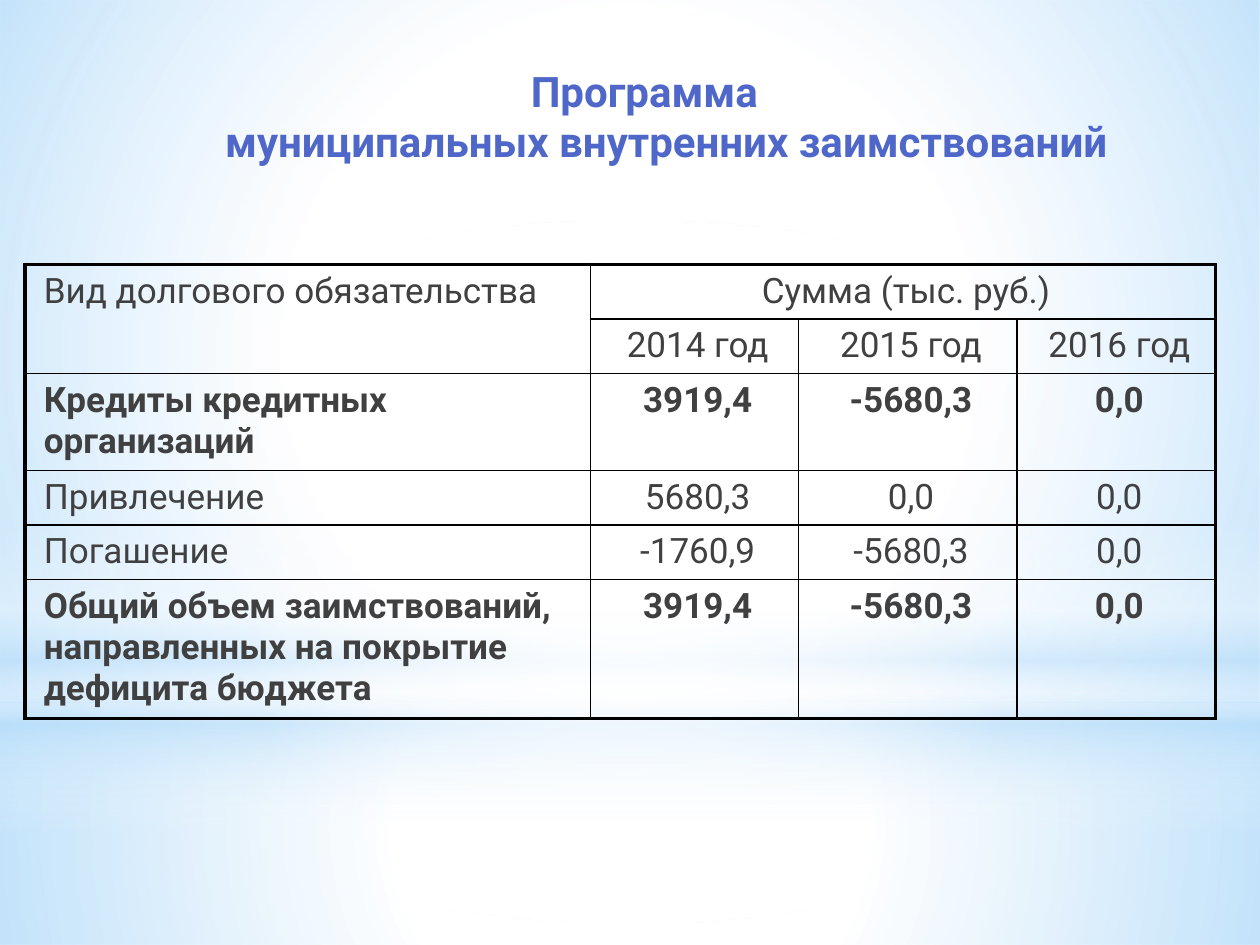
from dataclasses import dataclass

from pptx import Presentation
from pptx import oxml
from pptx import util as u
from pptx.dml.color import RGBColor
from pptx.enum import shapes, text
from pptx.oxml import ns


@dataclass(frozen=True)
class Theme:
    font: str = "Roboto"
    title_color: str = "4E67C8"
    text_color: str = "404040"
    border_color: str = "000000"
    white: str = "FFFFFF"
    sky: str = "B4DCFA"
    title_size: float = 24
    table_size: float = 20
    thin: float = 1
    thick: float = 2.25


RADIAL = ('<a:path path="circle"><a:fillToRect l="50000" t="50000" '
          'r="50000" b="50000"/></a:path>')
VERTICAL = '<a:lin ang="5400000" scaled="0"/>'


class SlideBuilder:
    def __init__(self, slide, theme):
        self.slide = slide
        self.theme = theme

    def gradient(self, kind, top, height, stops, direction):
        shape = self.slide.shapes.add_shape(
            kind, 0, u.Cm(top), u.Cm(25.4), u.Cm(height))
        shape.shadow.inherit = False
        shape.line.fill.background()
        shape.fill.background()
        marks = "".join(
            f'<a:gs pos="{place * 1000}"><a:srgbClr val="{color}">'
            f'<a:alpha val="{alpha * 1000}"/></a:srgbClr></a:gs>'
            for place, color, alpha in stops)
        fill = oxml.parse_xml(
            f'<a:gradFill {ns.nsdecls("a")} rotWithShape="1">'
            f'<a:gsLst>{marks}</a:gsLst>{direction}</a:gradFill>')
        properties = shape.element.spPr
        properties.replace(properties.find(ns.qn("a:noFill")), fill)

    def fill_para(self, para, words, size, color, indent, **formats):
        para.text = words
        for name, value in indent.items():
            para._p.get_or_add_pPr().set(name, str(u.Cm(value)))
        values = dict(name=self.theme.font, size=u.Pt(size), **formats)
        for span in para.runs:
            for name, value in values.items():
                setattr(span.font, name, value)
            span.font.color.rgb = RGBColor.from_string(color)

    def title(self, words, left, top, width, height):
        box = self.slide.shapes.add_textbox(
            *(u.Cm(length) for length in (left, top, width, height)))
        frame = box.text_frame
        settings = dict(word_wrap=True, margin_top=u.Cm(0.2),
                        vertical_anchor=text.MSO_ANCHOR.TOP)
        for name, value in settings.items():
            setattr(frame, name, value)
        para = frame.paragraphs[0]
        self.fill_para(para, words, self.theme.title_size,
                       self.theme.title_color,
                       {"marL": 0.89, "indent": -0.89}, bold=True)
        para.alignment = text.PP_ALIGN.CENTER

    def borders(self, cell, thick_sides):
        properties = cell._tc.get_or_add_tcPr()
        for side in "LRTB":
            width = self.theme.thick if side in thick_sides else self.theme.thin
            properties.append(oxml.parse_xml(
                f'<a:ln{side} {ns.nsdecls("a")} w="{u.Pt(width)}"><a:solidFill>'
                f'<a:srgbClr val="{self.theme.border_color}"/></a:solidFill>'
                f'</a:ln{side}>'))

    def table(self, rows, bold_rows, merges, left, top, widths, heights):
        table = self.slide.shapes.add_table(
            len(rows), len(widths), u.Cm(left), u.Cm(top),
            u.Cm(sum(widths)), u.Cm(sum(heights))).table
        for name in ("first_row", "horz_banding"):
            setattr(table, name, False)
        for column, width in zip(table.columns, widths):
            column.width = u.Cm(width)
        for row, height in zip(table.rows, heights):
            row.height = u.Cm(height)
        for start, end in merges:
            table.cell(*start).merge(table.cell(*end))
        last_row, last_column = len(rows) - 1, len(widths) - 1
        for r, row in enumerate(rows):
            for c, words in enumerate(row):
                cell = table.cell(r, c)
                right = c + (cell.span_width if cell.is_merge_origin else 1) - 1
                edges = {"L": c == 0, "R": right == last_column,
                         "T": r == 0, "B": r == last_row}
                self.borders(cell, [side for side, outer in edges.items() if outer])
                cell.fill.background()
                if cell.is_spanned:
                    continue
                para = cell.text_frame.paragraphs[0]
                self.fill_para(para, words, self.theme.table_size,
                               self.theme.text_color,
                               {"marL": 0.13, "indent": 0},
                               bold=r in bold_rows)
                para.space_after = u.Pt(3)
                para.alignment = (text.PP_ALIGN.CENTER if c
                                  else text.PP_ALIGN.LEFT)


def main():
    deck = Presentation()
    deck.slide_width, deck.slide_height = u.Cm(25.4), u.Cm(19.05)
    theme = Theme()
    page = SlideBuilder(deck.slides.add_slide(deck.slide_layouts[6]), theme)
    white, sky = theme.white, theme.sky
    rectangle, oval = shapes.MSO_SHAPE.RECTANGLE, shapes.MSO_SHAPE.OVAL

    page.gradient(rectangle, 14.17, 4.88,
                  [(0, white, 91), (37, white, 76), (100, sky, 79)], RADIAL)
    page.gradient(rectangle, 0, 14.17,
                  [(0, white, 89), (48, white, 62), (100, sky, 79)], RADIAL)
    page.gradient(rectangle, 10.46, 6.35,
                  [(0, white, 0), (29, white, 30), (45, sky, 40),
                   (55, white, 26), (65, sky, 60), (100, white, 0)], VERTICAL)
    page.gradient(oval, 4.45, 14.17,
                  [(0, white, 100), (56, white, 0)], RADIAL)

    page.title("Программа\vмуниципальных внутренних заимствований",
               2.49, 1.12, 21, 3.18)
    page.table(
        [["Вид долгового обязательства", "Сумма (тыс. руб.)", "", ""],
         ["", "2014 год", "2015 год", "2016 год"],
         ["Кредиты кредитных организаций", "3919,4", "-5680,3", "0,0"],
         ["Привлечение", "5680,3", "0,0", "0,0"],
         ["Погашение", "-1760,9", "-5680,3", "0,0"],
         ["Общий объем заимствований, направленных на покрытие дефицита бюджета",
          "3919,4", "-5680,3", "0,0"]],
        bold_rows={2, 5},
        merges=[((0, 0), (1, 0)), ((0, 1), (0, 3))],
        left=0.5, top=5.33,
        widths=[11.4, 4.2, 4.4, 4],
        heights=[1.09, 1.09, 1.91, 1.09, 1.09, 2.75])
    deck.save("out.pptx")


if __name__ == "__main__":
    main()
